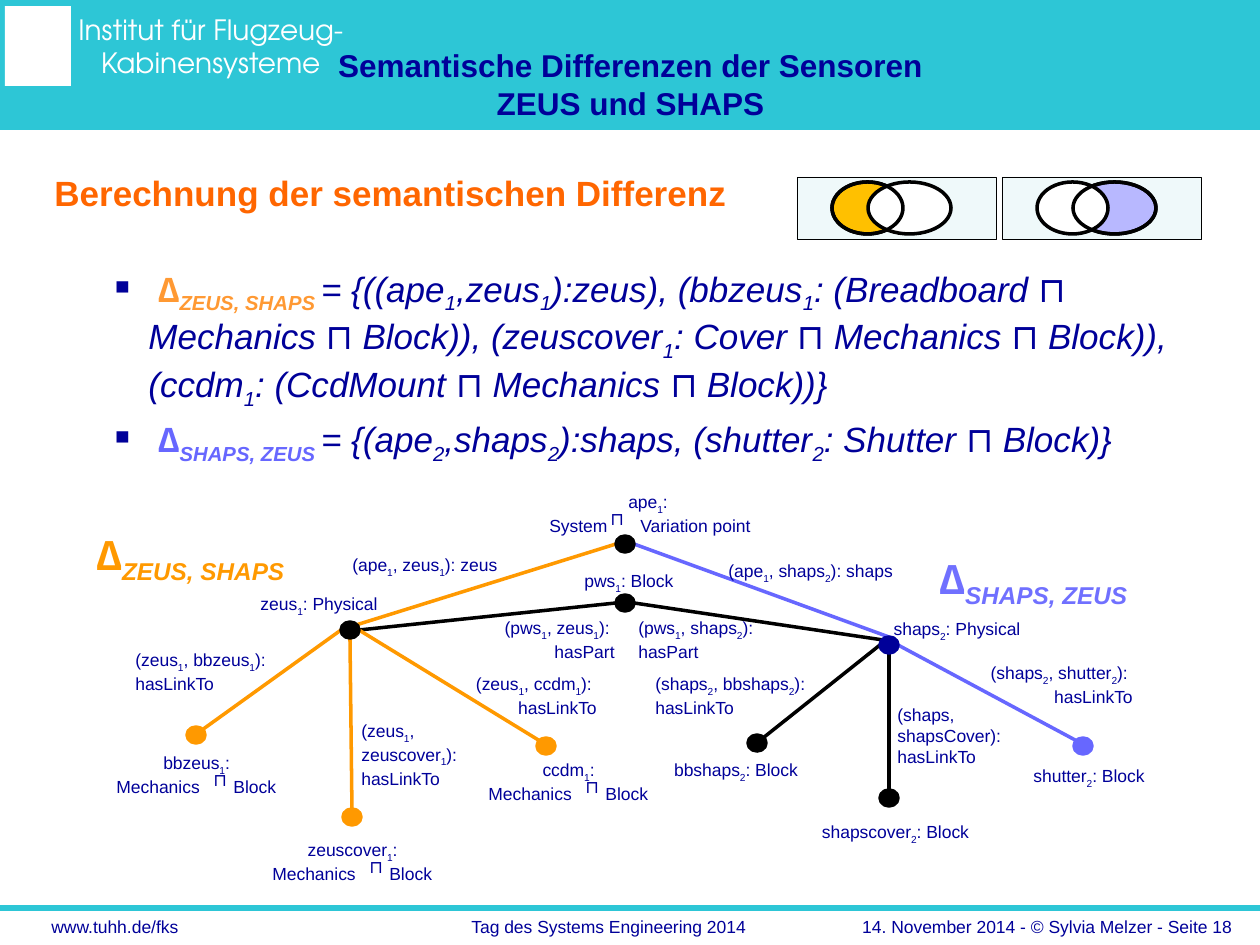
import dataclasses
import lxml.etree
import pptx
import pptx.dml.color
import pptx.enum.shapes
import pptx.enum.text
import pptx.oxml.ns
import pptx.util

SCALE = 914400 / 126
SHAPE = pptx.enum.shapes.MSO_SHAPE
ALIGN = {"l": pptx.enum.text.PP_ALIGN.LEFT, "c": pptx.enum.text.PP_ALIGN.CENTER,
         "r": pptx.enum.text.PP_ALIGN.RIGHT}


@dataclasses.dataclass(frozen=True)
class Theme:
    font: str = "Arial"
    brand_font: str = "TeX Gyre Adventor"
    text: str = "000099"
    band: str = "2DC6D6"
    white: str = "FFFFFF"
    black: str = "000000"
    heading: str = "FF6600"
    zeus: str = "FF9900"
    zeus_text: str = "FF9933"
    shaps: str = "6767FF"
    shaps_text: str = "7070FF"
    venn_back: str = "EFF9FA"
    venn_zeus: str = "FFC000"
    venn_shaps: str = "B8B8FF"
    small: int = 10
    brand: int = 16
    title: int = 18
    body: int = 20
    delta: int = 24


T = Theme()


def px(n):
    return pptx.util.Emu(round(n * SCALE))


def rgb(c):
    return pptx.dml.color.RGBColor.from_string(c)


def add_element(parent, tag, **attrs):
    return lxml.etree.SubElement(parent, pptx.oxml.ns.qn(tag), attrs)


def shape(s, kind, x, y, w, h, fill=None, line=None, width=2):
    sp = s.shapes.add_shape(kind, px(x), px(y), px(w), px(h))
    sp.shadow.inherit = False
    if fill:
        sp.fill.solid()
        sp.fill.fore_color.rgb = rgb(fill)
    else:
        sp.fill.background()
    if line:
        sp.line.color.rgb = rgb(line)
        sp.line.width = pptx.util.Pt(width)
    else:
        sp.line.fill.background()
    return sp


def line(s, x1, y1, x2, y2, color, width=2):
    c = s.shapes.add_connector(pptx.enum.shapes.MSO_CONNECTOR.STRAIGHT,
                               px(x1), px(y1), px(x2), px(y2))
    c.line.color.rgb = rgb(color)
    c.line.width = pptx.util.Pt(width)
    add_element(c._element.spPr, "a:effectLst")


def run(p, text, sub=False):
    r = p.add_run()
    r.text = text
    if sub:
        r.font._element.set("baseline", "-25000")
    return r


def indexed_runs(p, text):
    first, *rest = text.split("_")
    run(p, first)
    for part in rest:
        run(p, part[0], sub=True)
        if part[1:]:
            run(p, part[1:])


def style(p, size, color, bold=None, italic=None, font=T.font):
    f = p.font
    f.name, f.size, f.bold, f.italic = font, pptx.util.Pt(size), bold, italic
    f.color.rgb = rgb(color)


def text_frame(s, x, y, w, h):
    tf = s.shapes.add_textbox(px(x), px(y), px(w), px(h)).text_frame
    tf.word_wrap = True
    return tf


def text(s, x, y, w, h, lines, align="l", size=T.small, color=T.text, **kw):
    tf = text_frame(s, x, y, w, h)
    for i, content in enumerate(lines):
        p = tf.paragraphs[0] if i == 0 else tf.add_paragraph()
        p.alignment = ALIGN[align]
        indexed_runs(p, content)
        style(p, size, color, **kw)
    return tf


def header(s, x, y, w, h):
    shape(s, SHAPE.RECTANGLE, x, y, w, h, T.band)
    shape(s, SHAPE.RECTANGLE, x + 5, y + 6, 66, 80, T.white)
    text(s, x + 52, y + 6, 318, 80, ["Institut für Flugzeug-", "Kabinensysteme"],
         "c", T.brand, T.white, font=T.brand_font)
    tf = text(s, x + 325, y + 36, 611, 95,
              ["Semantische Differenzen der Sensoren ZEUS und SHAPS"], "c", T.title, bold=True)
    tf.vertical_anchor = pptx.enum.text.MSO_ANCHOR.MIDDLE


def footer(s, x, y, w, h):
    line(s, x, y, x + w, y, T.band, 3)
    text(s, x + 39, y + 2, 246, 34, ["www.tuhh.de/fks"])
    text(s, x + 459, y + 2, 301, 34, ["Tag des Systems Engineering 2014"])
    text(s, x + 827, y + 2, 417, 34, ["14. November 2014 - © Sylvia Melzer - Seite 18"], "r")


def delta(p, pair, color=None):
    for r in (run(p, "∆"), run(p, pair, sub=True)):
        if color:
            r.font.bold = True
            r.font.color.rgb = rgb(color)


def body(s, x, y, w, h):
    tf = text(s, x + 8, y, w - 8, 50, ["Berechnung der semantischen Differenz"],
              size=T.body, color=T.heading, bold=True)
    tf = text_frame(s, x, y + 96, w, h - 96)
    formulas = (
        ("ZEUS, SHAPS ", T.zeus_text,
         "= {((ape_1,zeus_1):zeus), (bbzeus_1: (Breadboard ⊓ Mechanics ⊓ Block)), "
         "(zeuscover_1: Cover ⊓ Mechanics ⊓ Block)), (ccdm_1: (CcdMount ⊓ Mechanics ⊓ Block))}"),
        ("SHAPS, ZEUS ", T.shaps,
         "= {(ape_2,shaps_2):shaps, (shutter_2: Shutter ⊓ Block)}"),
    )
    for i, (pair, color, formula) in enumerate(formulas):
        p = tf.add_paragraph() if i else tf.paragraphs[0]
        if i:
            p.space_before = pptx.util.Pt(4)
        pPr = p._p.get_or_add_pPr()
        pPr.set("marL", str(px(102)))
        pPr.set("indent", str(px(-39)))
        add_element(pPr, "a:buChar", char="▪")
        run(p, " ")
        delta(p, pair, color)
        indexed_runs(p, formula)
        style(p, T.body, T.text, italic=True)


def venn(s, x, y, w, h, marked, fill):
    shape(s, SHAPE.RECTANGLE, x, y, w, h, T.venn_back, T.black, 0.25)
    sets = ((x + 35, y + 5, 71, h - 10), (x + 71, y + 5, 83, h - 10))
    shape(s, SHAPE.OVAL, *sets[marked], fill, T.black)
    shape(s, SHAPE.OVAL, *sets[1 - marked], T.white, T.black)
    shape(s, SHAPE.OVAL, *sets[marked], None, T.black)


def delta_title(s, x, y, w, h, pair, color):
    p = text_frame(s, x, y, w, h).paragraphs[0]
    delta(p, pair)
    style(p, T.delta, color, True, True)


def concept(s, x, y, w, h, name, parts, tab, meet):
    tf = text(s, x, y, w, h, [name], "c")
    p = tf.add_paragraph()
    tabs = add_element(p._p.get_or_add_pPr(), "a:tabLst")
    add_element(tabs, "a:tab", pos=str(px(tab)), algn="l")
    run(p, "\t".join(parts))
    style(p, T.small, T.text)
    text(s, x + meet, y + 17, 34, 26, ["⊓"])


def graph(s, x, y, w, h):
    nodes = {
        "ape": (625, 64, T.black), "pws": (625, 123, T.black),
        "zeus": (350, 150, T.black), "shaps": (889, 165, T.text),
        "bbzeus": (196, 255, T.zeus), "zeuscover": (352, 337, T.zeus),
        "ccdm": (546, 266, T.zeus), "bbshaps": (757, 263, T.black),
        "shapscover": (889, 318, T.black), "shutter": (1083, 266, T.shaps),
    }
    sites = {"l": (-9, 0), "r": (9, 0), "t": (0, -8), "b": (0, 8), "tl": (-6, -5), "tr": (6, -5)}
    edges = (
        ("ape", "l", "zeus", "tr", T.zeus), ("ape", "r", "shaps", "t", T.shaps),
        ("pws", "l", "zeus", "r", T.black), ("pws", "r", "shaps", "tl", T.black),
        ("zeus", "l", "bbzeus", "tr", T.zeus), ("zeus", "b", "zeuscover", "t", T.zeus),
        ("zeus", "r", "ccdm", "tl", T.zeus), ("shaps", "l", "bbshaps", "tr", T.black),
        ("shaps", "b", "shapscover", "t", T.black), ("shaps", "r", "shutter", "tl", T.shaps),
    )
    labels = (
        (572, 84, 132, "l", "pws_1: Block"),
        (218, 107, 202, "c", "zeus_1: Physical"),
        (856, 132, 202, "c", "shaps_2: Physical"),
        (635, 273, 202, "c", "bbshaps_2: Block"),
        (751, 335, 289, "c", "shapscover_2: Block"),
        (988, 279, 202, "c", "shutter_2: Block"),
        (340, 68, 227, "l", "(ape_1, zeus_1): zeus"),
        (716, 74, 306, "l", "(ape_1, shaps_2): shaps"),
        (425, 131, 202, "r", "(pws_1, zeus_1): ", "hasPart"),
        (626, 131, 202, "l", "(pws_1, shaps_2):", "hasPart"),
        (123, 163, 227, "l", "(zeus_1, bbzeus_1): hasLinkTo"),
        (349, 234, 161, "l", "(zeus_1, zeuscover_1): hasLinkTo"),
        (407, 187, 202, "r", "(zeus_1, ccdm_1): ", "hasLinkTo"),
        (643, 187, 240, "l", "(shaps_2, bbshaps_2): hasLinkTo"),
        (885, 218, 145, "l", "(shaps, shapsCover): hasLinkTo"),
        (883, 176, 262, "r", "(shaps_2, shutter_2): ", "hasLinkTo"),
    )
    for parent, start, child, end, color in edges:
        ends = [x0 + node + offset
                for name, site in ((parent, start), (child, end))
                for x0, node, offset in zip((x, y), nodes[name], sites[site])]
        line(s, *ends, color)
    for cx, cy, color in nodes.values():
        shape(s, SHAPE.OVAL, x + cx - 9, y + cy - 8, 18, 16, color, color)
    for left, top, width, align, *lines in labels:
        text(s, x + left, y + top, width, 26 * len(lines), lines, align)
    concept(s, x + 537, y + 5, 227, 44, "ape_1: ", ("System", "Variation point"), 91, 61)
    for left, top, name in ((104, 266, "bbzeus_1: "), (260, 353, "zeuscover_1: "),
                            (476, 273, "ccdm_1: ")):
        concept(s, x + left, y + top, 190, 44, name, ("Mechanics", "Block"), 117, 97)
    delta_title(s, x + 84, y + 42, 246, 63, "ZEUS, SHAPS", T.zeus)
    delta_title(s, x + 927, y + 66, 247, 63, "SHAPS, ZEUS", T.shaps_text)


def main():
    prs = pptx.Presentation()
    prs.slide_width, prs.slide_height = px(1260), px(945)
    s = prs.slides.add_slide(prs.slide_layouts[6])
    footer(s, 0, 908, 1260, 37)
    header(s, 0, 0, 1260, 130)
    body(s, 34, 165, 1191, 315)
    graph(s, 0, 480, 1260, 420)
    venn(s, 797, 177, 199, 62, 0, T.venn_zeus)
    venn(s, 1002, 177, 199, 62, 1, T.venn_shaps)
    prs.save("out.pptx")


if __name__ == "__main__":
    main()
